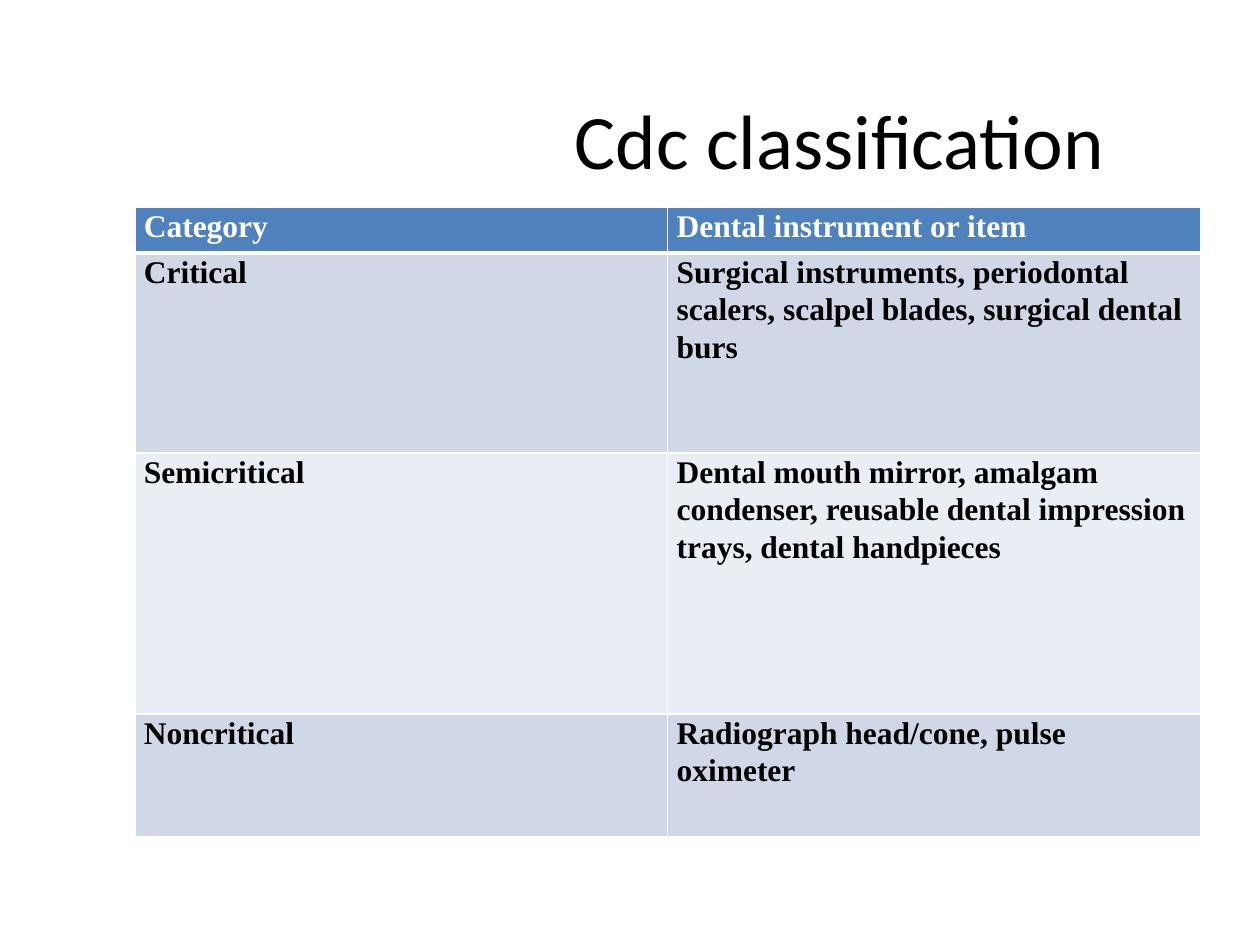
from lxml.etree import SubElement
from pptx import Presentation
from pptx.dml.color import RGBColor
from pptx.enum.text import MSO_ANCHOR, PP_ALIGN
from pptx.oxml.ns import qn
from pptx.util import Cm, Pt

HEADER_FILL = "4F81BD"
BAND_FILLS = ("D0D8E8", "E9EDF4")
WHITE, BLACK = "FFFFFF", "000000"

ROWS = [
    ("Category", "Dental instrument or item"),
    ("Critical", "Surgical instruments, periodontal scalers, scalpel blades, "
                 "surgical dental burs"),
    ("Semicritical", "Dental mouth mirror, amalgam condenser, reusable dental "
                     "impression trays, dental handpieces"),
    ("Noncritical", "Radiograph head/cone, pulse oximeter"),
]
ROW_HEIGHTS = (0.93, 4.03, 5.26, 2.48)


def color(hex_code):
    return RGBColor.from_string(hex_code)


def format_run(run, font, size, hex_code, bold=False):
    run.font.name = font
    run.font.size = Pt(size)
    run.font.bold = bold
    run.font.color.rgb = color(hex_code)


def set_borders(cell, bottom_width):
    """Draw white rules; they must come before the fill in the cell properties."""
    properties = cell._tc.get_or_add_tcPr()
    for side, width in (("L", 1), ("R", 1), ("T", 1), ("B", bottom_width)):
        rule = SubElement(properties, qn(f"a:ln{side}"), w=str(Pt(width)))
        fill = SubElement(rule, qn("a:solidFill"))
        SubElement(fill, qn("a:srgbClr"), val=WHITE)


def format_cell(cell, text, is_header, fill):
    set_borders(cell, 3 if is_header else 1)
    cell.fill.solid()
    cell.fill.fore_color.rgb = color(fill)
    cell.margin_left = cell.margin_right = Cm(0.18)
    cell.margin_top = cell.margin_bottom = 0
    cell.text_frame.text = text
    paragraph = cell.text_frame.paragraphs[0]
    paragraph.line_spacing = 1.07
    format_run(paragraph.runs[0], "Times New Roman", 18,
               WHITE if is_header else BLACK, bold=True)


def place_title(slide, text, left, top, width, height):
    title = slide.shapes.title
    title.left, title.top, title.width, title.height = left, top, width, height
    title.text_frame.text = text
    title.text_frame.vertical_anchor = MSO_ANCHOR.TOP
    paragraph = title.text_frame.paragraphs[0]
    paragraph.alignment = PP_ALIGN.CENTER
    format_run(paragraph.runs[0], "Calibri", 44, BLACK)


def place_classification(slide, left, top, width, height):
    columns = len(ROWS[0])
    classification = slide.shapes.add_table(
        len(ROWS), columns, left, top, width, height).table
    for column in classification.columns:
        column.width = width // columns
    for index, (texts, row_height) in enumerate(zip(ROWS, ROW_HEIGHTS)):
        row = classification.rows[index]
        row.height = Cm(row_height)
        is_header = index == 0
        fill = HEADER_FILL if is_header else BAND_FILLS[(index - 1) % 2]
        for cell, text in zip(row.cells, texts):
            format_cell(cell, text, is_header, fill)


def main():
    presentation = Presentation()
    presentation.slide_width, presentation.slide_height = Cm(25.4), Cm(19.05)
    slide = presentation.slides.add_slide(presentation.slide_layouts[5])

    # Title
    place_title(slide, "Cdc classification",
                Cm(3.18), Cm(1.73), Cm(27.5), Cm(4.11))
    # Instrument categories
    place_classification(slide, Cm(2.72), Cm(4.17), Cm(21.48),
                         Cm(sum(ROW_HEIGHTS)))

    presentation.save("out.pptx")


if __name__ == "__main__":
    main()
